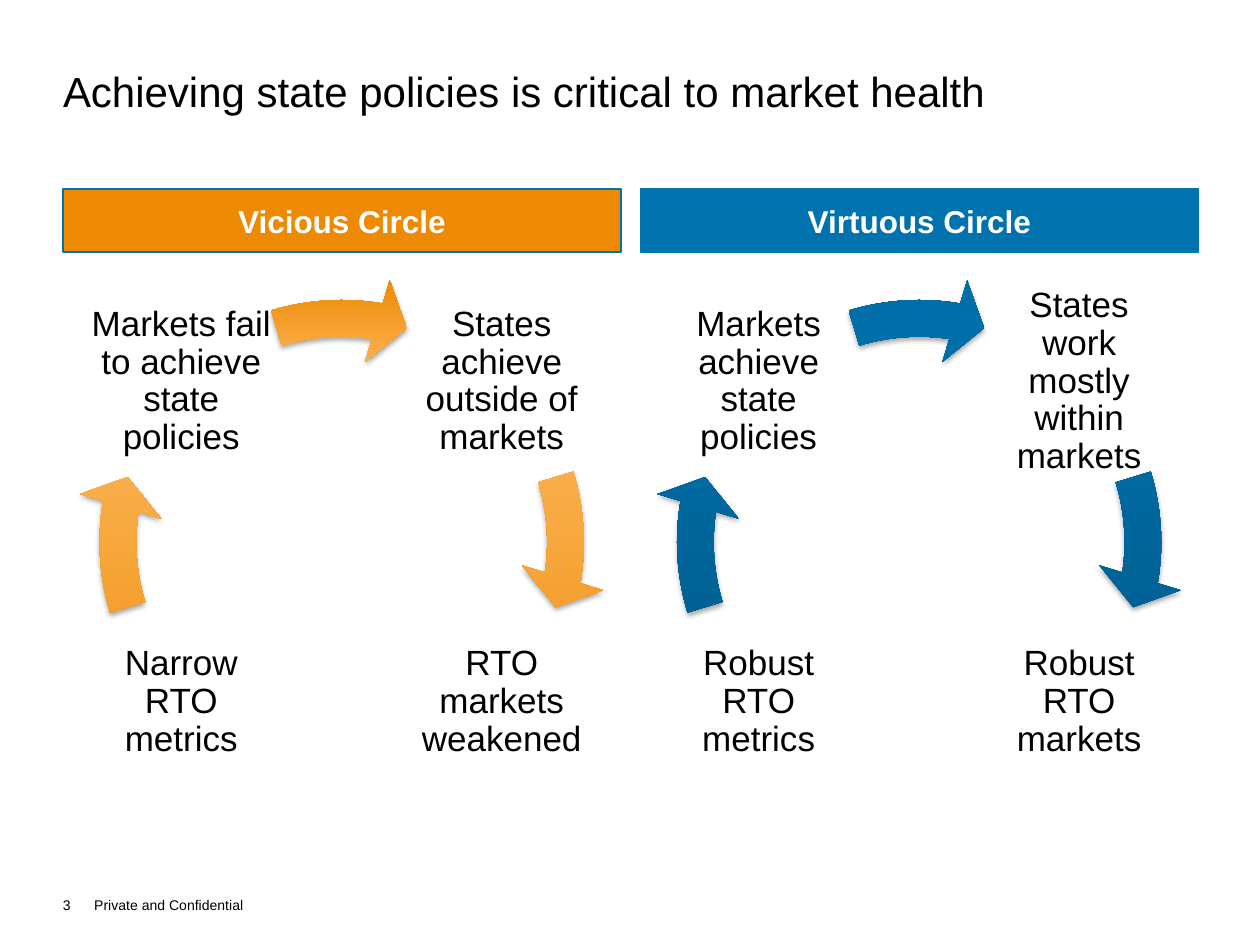
from dataclasses import dataclass
from typing import Any

from pptx import Presentation
from pptx.dml.color import RGBColor as RGB
from pptx.enum.shapes import MSO_SHAPE as Shape
from pptx.enum.text import MSO_ANCHOR as Anchor, MSO_AUTO_SIZE as Auto, PP_ALIGN as Align
from pptx.oxml import parse_xml
from pptx.oxml.ns import nsdecls, qn
from pptx.util import Cm, Pt


@dataclass(frozen=True)
class Theme:
    font: str = "Arial"
    ink: str = "000000"
    paper: str = "FFFFFF"
    orange: str = "ED8903"
    blue: str = "0073AE"
    title: int = 24
    label: int = 20
    header: int = 18
    footer: int = 8


@dataclass(frozen=True)
class Box:
    x: float
    y: float
    w: float
    h: float

    def lengths(self) -> tuple:
        return tuple(Cm(v) for v in (self.x, self.y, self.w, self.h))


@dataclass(frozen=True)
class Circle:
    heading: str
    color: str
    stops: tuple[str, str, str]
    labels: tuple[str, str, str, str]
    dx: float


T = Theme()
STOP_POSITIONS = (0, 80000, 100000)
ARROW_TURNS = (0, 2, 3)
QUARTER, FULL_TURN = 54, 216
ARROW_END, ARROW_SWEEP = 5.5, 15.66
LABEL_X, LABEL_Y, LABEL_SIZE = 1.75, 5.79, 3.81
LABEL_STEP = 6.46

CIRCLES = (
    Circle("Vicious Circle", T.orange, (T.orange, "FDB95F", T.orange),
           ("Markets fail to achieve state policies",
            "States achieve outside of markets",
            "Narrow RTO metrics",
            "RTO markets weakened"), 0),
    Circle("Virtuous Circle", T.blue, ("005682", "006FA9", "0070A9"),
           ("Markets achieve state policies",
            "States work mostly within markets",
            "Robust RTO metrics",
            "Robust RTO markets"), 11.64),
)


def assign(obj: Any, values: dict) -> None:
    for name, value in values.items():
        setattr(obj, name, value)


def write(sp: Any, text: str, size: int, color: str = T.ink, bold: bool = False,
          align: Any = Align.LEFT, anchor: Any = Anchor.MIDDLE,
          inset: float = 0, spacing: float = 1.0, wrap: bool = True) -> None:
    tf = sp.text_frame
    assign(tf, {"word_wrap": wrap, "auto_size": Auto.NONE, "vertical_anchor": anchor})
    assign(tf, {f"margin_{side}": Cm(inset) for side in ("left", "top", "right", "bottom")})
    p = tf.paragraphs[0]
    assign(p, {"alignment": align, "line_spacing": spacing})
    r = p.add_run()
    r.text = text
    assign(r.font, {"name": T.font, "size": Pt(size), "bold": bold})
    r.font.color.rgb = RGB.from_string(color)


def add_header(s: Any, circle: Circle) -> None:
    box = Box(1.27 + circle.dx, 3.81, 11.25, 1.27)
    sp = s.shapes.add_shape(Shape.RECTANGLE, *box.lengths())
    sp.shadow.inherit = False
    sp.fill.solid()
    sp.fill.fore_color.rgb = RGB.from_string(circle.color)
    sp.line.color.rgb = RGB.from_string(T.blue)
    sp.line.width = Pt(0.75)
    write(sp, circle.heading, T.header, T.paper, True, Align.CENTER, inset=0.1)


def add_label(group: Any, text: str, column: int, row: int, dx: float) -> None:
    box = Box(LABEL_X + dx + column * LABEL_STEP, LABEL_Y + row * LABEL_STEP,
              LABEL_SIZE, LABEL_SIZE)
    sp = group.shapes.add_textbox(*box.lengths())
    write(sp, text, T.label, align=Align.CENTER, inset=0.07, spacing=0.9)


def add_arrow(group: Any, circle: Circle, turn: int) -> None:
    box = Box(1.52 + circle.dx, 5.56, 10.74, 10.74)
    sp = group.shapes.add_shape(Shape.CIRCULAR_ARROW, *box.lengths())
    end = ARROW_END + turn * QUARTER
    start = (end - ARROW_SWEEP) % FULL_TURN
    for i, value in enumerate((0.069, 4.65, end, start, 0.08)):
        sp.adjustments[i] = value
    sp.line.fill.background()
    sp.fill.gradient()
    sp.fill.gradient_angle = 90
    props = sp._element.spPr
    stops = props.find(qn("a:gradFill")).find(qn("a:gsLst"))
    for old in list(stops):
        stops.remove(old)
    for pos, color in zip(STOP_POSITIONS, circle.stops):
        stops.append(parse_xml(
            f'<a:gs {nsdecls("a")} pos="{pos}"><a:srgbClr val="{color}"/></a:gs>'))
    sp.shadow.inherit = False
    props.find(qn("a:effectLst")).append(parse_xml(
        f'<a:outerShdw {nsdecls("a")} blurRad="{Pt(3.1)}" dist="{Pt(1.8)}" dir="5400000" '
        f'rotWithShape="0"><a:srgbClr val="{T.ink}"><a:alpha val="35000"/></a:srgbClr>'
        '</a:outerShdw>'))


def add_circle(s: Any, circle: Circle) -> None:
    add_header(s, circle)
    group = s.shapes.add_group_shape()
    for i, text in enumerate(circle.labels):
        row, column = divmod(i, 2)
        add_label(group, text, column, row, circle.dx)
    for turn in ARROW_TURNS:
        add_arrow(group, circle, turn)


def add_footer(s: Any, text: str, box: Box, wrap: bool) -> None:
    sp = s.shapes.add_textbox(*box.lengths())
    write(sp, text, T.footer, anchor=Anchor.BOTTOM, wrap=wrap)


def main() -> None:
    prs = Presentation()
    assign(prs, {"slide_width": Cm(25.4), "slide_height": Cm(19.05)})
    s = prs.slides.add_slide(prs.slide_layouts[5])
    title = s.shapes.title
    assign(title, dict(zip(("left", "top", "width", "height"),
                           Box(1.27, 1.27, 22.86, 1.12).lengths())))
    write(title, "Achieving state policies is critical to market health", T.title)
    for circle in CIRCLES:
        add_circle(s, circle)
    add_footer(s, "Private and Confidential", Box(1.9, 18.08, 3.05, 0.33), False)
    add_footer(s, "3", Box(1.27, 17.8, 0.79, 0.61), True)
    prs.save("out.pptx")


if __name__ == "__main__":
    main()
